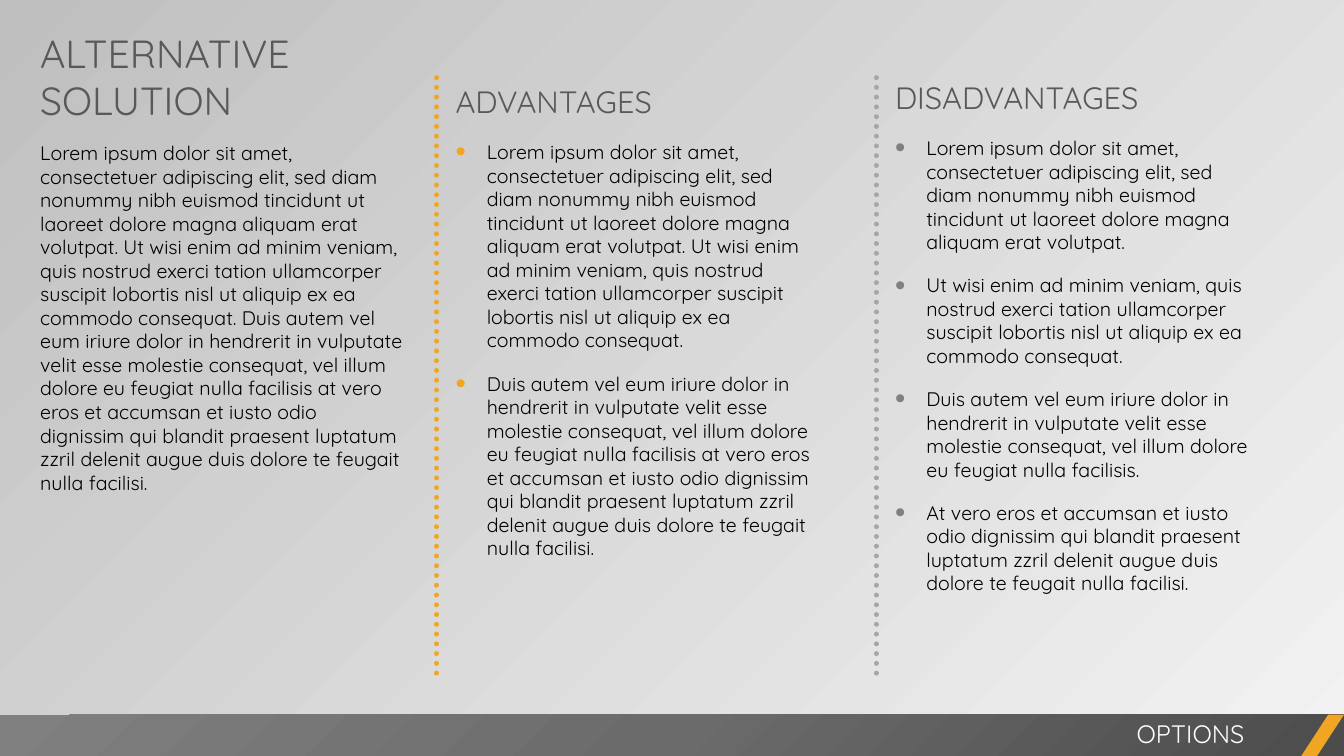
from lxml import etree
from pptx import Presentation
from pptx.dml.color import RGBColor
from pptx.enum.shapes import MSO_CONNECTOR as CONN, MSO_SHAPE as SHAPE
from pptx.enum.text import MSO_AUTO_SIZE as AUTO, PP_ALIGN as ALIGN
from pptx.enum.dml import MSO_LINE as DASH
from pptx.oxml import parse_xml
from pptx.oxml.ns import nsdecls, qn
from pptx.util import Inches, Pt

FONT = "Quicksand"
COLORS = {
    "bg_light": "F2F2F2", "bg_dark": "BFBFBF",
    "bar_dark": "4C4C4C", "bar_mid": "6B6B6B", "bar_light": "808080",
    "orange": "F0A622", "gray": "808080", "dots": "A6A6A6",
    "heading": "595959", "body": "000000", "white": "FFFFFF",
}
LOREM = ("Lorem ipsum dolor sit amet, consectetuer adipiscing elit, sed diam nonummy nibh "
         "euismod tincidunt ut laoreet dolore magna aliquam erat volutpat.")
WISI = ("Ut wisi enim ad minim veniam, quis nostrud exerci tation ullamcorper suscipit "
        "lobortis nisl ut aliquip ex ea commodo consequat.")
DUIS = ("Duis autem vel eum iriure dolor in hendrerit in vulputate velit esse molestie "
        "consequat, vel illum dolore eu feugiat nulla facilisis")
VERO = ("vero eros et accumsan et iusto odio dignissim qui blandit praesent luptatum zzril "
        "delenit augue duis dolore te feugait nulla facilisi.")


def rgb(name):
    """Return the named colour."""
    return RGBColor.from_string(COLORS[name])


def add_text(slide, box, paragraphs, size, color, align=None, bullet=None, before=None):
    """Place a wrapped text box, with coloured bullets if asked for."""
    tf = slide.shapes.add_textbox(*map(Inches, box)).text_frame
    tf.word_wrap = True
    tf.auto_size = AUTO.SHAPE_TO_FIT_TEXT
    tf.text = "\n".join(paragraphs)
    for p in tf.paragraphs:
        p.alignment = align
        if before:
            p.space_before = Pt(before)
        font = p.runs[0].font
        font.name, font.size, font.color.rgb = FONT, Pt(size), rgb(color)
        if bullet:
            add_bullet(p, bullet)


def add_bullet(p, color):
    """Give a paragraph a hanging round bullet."""
    pPr = p._p.get_or_add_pPr()
    pPr.set("marL", str(Inches(0.31)))
    pPr.set("indent", str(-Inches(0.31)))
    clr = etree.SubElement(pPr, qn("a:buClr"))
    etree.SubElement(clr, qn("a:srgbClr"), val=COLORS[color])
    etree.SubElement(pPr, qn("a:buSzPct"), val="150000")
    etree.SubElement(pPr, qn("a:buFont"), typeface="Arial")
    etree.SubElement(pPr, qn("a:buChar"), char="•")


def add_background(slide):
    """Fill the background with a diagonal gradient."""
    fill = slide.background.fill
    fill.gradient()
    fill.gradient_angle = 135
    for stop, name, position in zip(fill.gradient_stops, ("bg_light", "bg_dark"), (0, 1)):
        stop.color.rgb = rgb(name)
        stop.position = position


def add_footer(slide, x, y, w, h):
    """Draw the shaded bar, its slanted accent and its label."""
    bar = slide.shapes.add_shape(SHAPE.RECTANGLE, *map(Inches, (x, y, w, h)))
    bar.fill.gradient()
    stops = "".join(
        f'<a:gs pos="{pos}"><a:srgbClr val="{COLORS[name]}"/></a:gs>'
        for pos, name in ((0, "bar_dark"), (50000, "bar_mid"), (100000, "bar_light")))
    spPr = bar._element.spPr
    spPr.replace(spPr.find(qn("a:gradFill")), parse_xml(
        f'<a:gradFill {nsdecls("a")} rotWithShape="1"><a:gsLst>{stops}</a:gsLst>'
        '<a:path path="circle"><a:fillToRect l="100000" t="100000"/></a:path></a:gradFill>'))
    accent = slide.shapes.add_shape(
        SHAPE.PARALLELOGRAM, *map(Inches, (x + w - 0.43, y, 0.43, h)))
    accent.adjustments[0] = 0.65
    accent.fill.solid()
    accent.fill.fore_color.rgb = rgb("orange")
    for sp in (bar, accent):
        sp.line.fill.background()
        sp.shadow.inherit = False
    add_text(slide, (x + 5.25, y - 0.01, 7.19, 0.4), ["OPTIONS"], 18, "white", ALIGN.RIGHT)


def add_solution(slide, x, y):
    """Place the slide title and the description below it."""
    add_text(slide, (x, y, 4.03, 1.04), ["ALTERNATIVE SOLUTION"], 28, "heading")
    text = f"{LOREM} {WISI} {DUIS} at {VERO}"
    add_text(slide, (x, y + 1.11, 3.8, 3.87), [text], 14, "body", before=14)


def add_column(slide, x, y, h, heading, points, bullet):
    """Place a heading above a bulleted list."""
    add_text(slide, (x, y, 4.03, 0.47), [heading], 22, "heading")
    add_text(slide, (x, y + 0.57, 3.8, h), points, 14, "body", bullet=bullet, before=14)


def add_divider(slide, x, y, h, color):
    """Draw a vertical line of round dots."""
    cx = slide.shapes.add_connector(CONN.STRAIGHT, *map(Inches, (x, y, x, y + h)))
    cx.line.width = Pt(3.5)
    cx.line.color.rgb = rgb(color)
    cx.line.dash_style = DASH.ROUND_DOT
    cx.line._get_or_add_ln().set("cap", "rnd")
    etree.SubElement(cx._element.spPr, qn("a:effectLst"))


def main():
    """Build and save the slide."""
    prs = Presentation()
    prs.slide_width, prs.slide_height = Inches(13.33), Inches(7.5)
    slide = prs.slides.add_slide(prs.slide_layouts[6])
    add_background(slide)
    add_footer(slide, 0, 7.09, 13.33, 0.42)
    add_solution(slide, 0.3, 0.24)
    add_column(slide, 4.42, 0.77, 4.3, "ADVANTAGES",
               [f"{LOREM} {WISI}", f"{DUIS} at {VERO}"], "orange")
    add_column(slide, 8.78, 0.73, 4.7, "DISADVANTAGES",
               [LOREM, WISI, f"{DUIS}.", f"At {VERO}"], "gray")
    for x, color in ((4.33, "orange"), (8.69, "dots")):
        add_divider(slide, x, 0.77, 6, color)
    prs.save("out.pptx")


if __name__ == "__main__":
    main()
